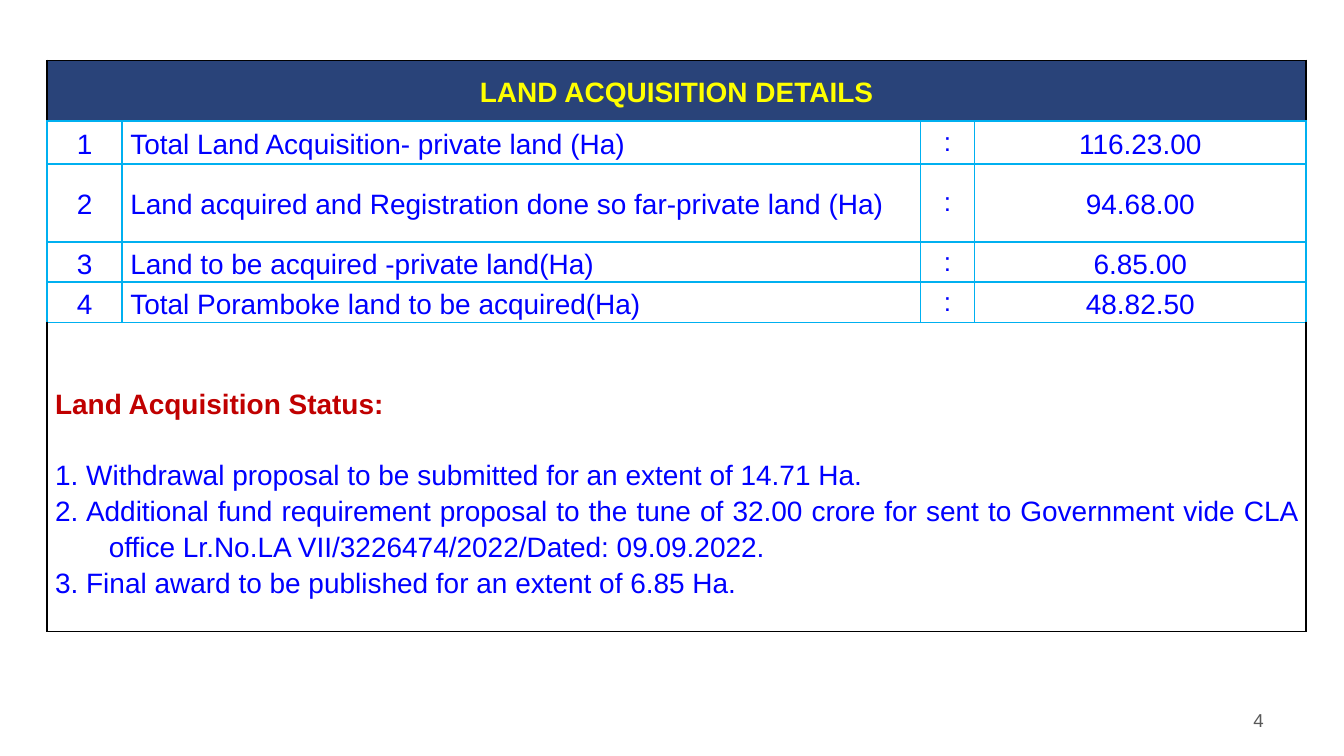
from lxml import etree
from pptx import Presentation
from pptx.dml.color import RGBColor as RGB
from pptx.enum.text import MSO_ANCHOR as Anchor, PP_ALIGN as Align
from pptx.oxml.ns import qn
from pptx.util import Inches, Pt

COLORS = {"navy": "002060", "yellow": "FFFF00", "blue": "0000FF", "red": "C00000",
          "cyan": "00B0F0", "black": "000000", "gray": "595959"}


def style(para, text, color, size=15, align=Align.LEFT, bold=False, space=1.15):
    para.text = text
    para.alignment = align
    para.line_spacing = space
    font = para.font
    font.name, font.size, font.bold = "Arial", Pt(size), bold
    font.color.rgb = RGB.from_string(COLORS[color])


def border(cell, sides):
    props = cell._tc.get_or_add_tcPr()
    for side, color in zip("LRTB", sides):
        line = etree.SubElement(props, qn(f"a:ln{side}"), w=str(Pt(1)))
        fill = etree.SubElement(line, qn("a:solidFill"))
        etree.SubElement(fill, qn("a:srgbClr"), val=COLORS[color])


# Widescreen 16:9 slide
deck = Presentation()
deck.slide_width = Inches(10)
deck.slide_height = Inches(10) * 9 // 16
slide = deck.slides.add_slide(deck.slide_layouts[6])

# Table grid
widths = [0.56, 5.94, 0.4, 2.47]
heights = [0.45, 0.32, 0.58, 0.3, 0.3, 2.3]
table = slide.shapes.add_table(len(heights), len(widths), Inches(0.35), Inches(0.45),
                               Inches(sum(widths)), Inches(sum(heights))).table
table.first_row = table.horz_banding = False
for col, width in zip(table.columns, widths):
    col.width = Inches(width)
for row, height in zip(table.rows, heights):
    row.height = Inches(height)

# Borders, margins and fills: black frame around the title and status rows
last = len(heights) - 1
frames = {0: ["black", "black", "black", "cyan"],
          last: ["black", "black", "cyan", "black"]}
for i, row in enumerate(table.rows):
    for cell in row.cells:
        border(cell, frames.get(i, ["cyan"] * 4))
        cell.fill.background()
        cell.vertical_anchor = Anchor.MIDDLE
        cell.margin_left = cell.margin_right = Inches(0.06)
        cell.margin_top = cell.margin_bottom = 0
for i in frames:
    table.cell(i, 0).merge(table.cell(i, len(widths) - 1))

# Title row, slightly see-through
title = table.cell(0, 0)
title.fill.solid()
title.fill.fore_color.rgb = RGB.from_string(COLORS["navy"])
shade = title._tc.tcPr.find(qn("a:solidFill"))[0]
etree.SubElement(shade, qn("a:alpha"), val="84000")
style(title.text_frame.paragraphs[0], "LAND ACQUISITION DETAILS", "yellow",
      align=Align.CENTER, bold=True)

# Land extents
extents = [
    ("Total Land Acquisition- private land (Ha)", "116.23.00"),
    ("Land acquired and Registration done so far-private land (Ha)", "94.68.00"),
    ("Land to be acquired -private land(Ha)", "6.85.00"),
    ("Total Poramboke land to be acquired(Ha)", "48.82.50"),
]
for i, (label, area) in enumerate(extents, 1):
    for j, text in enumerate([str(i), label, ":", area]):
        colon = j == 2
        style(table.cell(i, j).text_frame.paragraphs[0], text, "blue",
              size=14 if colon else 15, space=1.0 if colon else 1.15,
              align=Align.LEFT if j == 1 else Align.CENTER)

# Status notes
status = table.cell(last, 0)
status.margin_top = Inches(0.22)
frame = status.text_frame
style(frame.paragraphs[0], "Land Acquisition Status:", "red", bold=True)
notes = [
    "1. Withdrawal proposal to be submitted for an extent of 14.71 Ha.",
    "2. Additional fund requirement proposal to the tune of 32.00 crore for sent to "
    "Government vide CLA office Lr.No.LA VII/3226474/2022/Dated: 09.09.2022.",
    "3. Final award to be published for an extent of 6.85 Ha.",
]
for i, note in enumerate(notes):
    para = frame.add_paragraph()
    style(para, note, "blue", align=Align.JUSTIFY)
    if i == 0:
        para.space_before = Pt(19)
    if i == 1:
        props = para._p.get_or_add_pPr()
        props.set("marL", str(Inches(0.4)))
        props.set("indent", str(Inches(-0.4)))

# Page number
page = slide.shapes.add_textbox(Inches(7.17), Inches(5.21), Inches(2.33), Inches(0.3))
page.text_frame.word_wrap = True
page.text_frame.vertical_anchor = Anchor.MIDDLE
style(page.text_frame.paragraphs[0], "4", "gray", size=10, align=Align.RIGHT, space=1.0)

deck.save("out.pptx")
